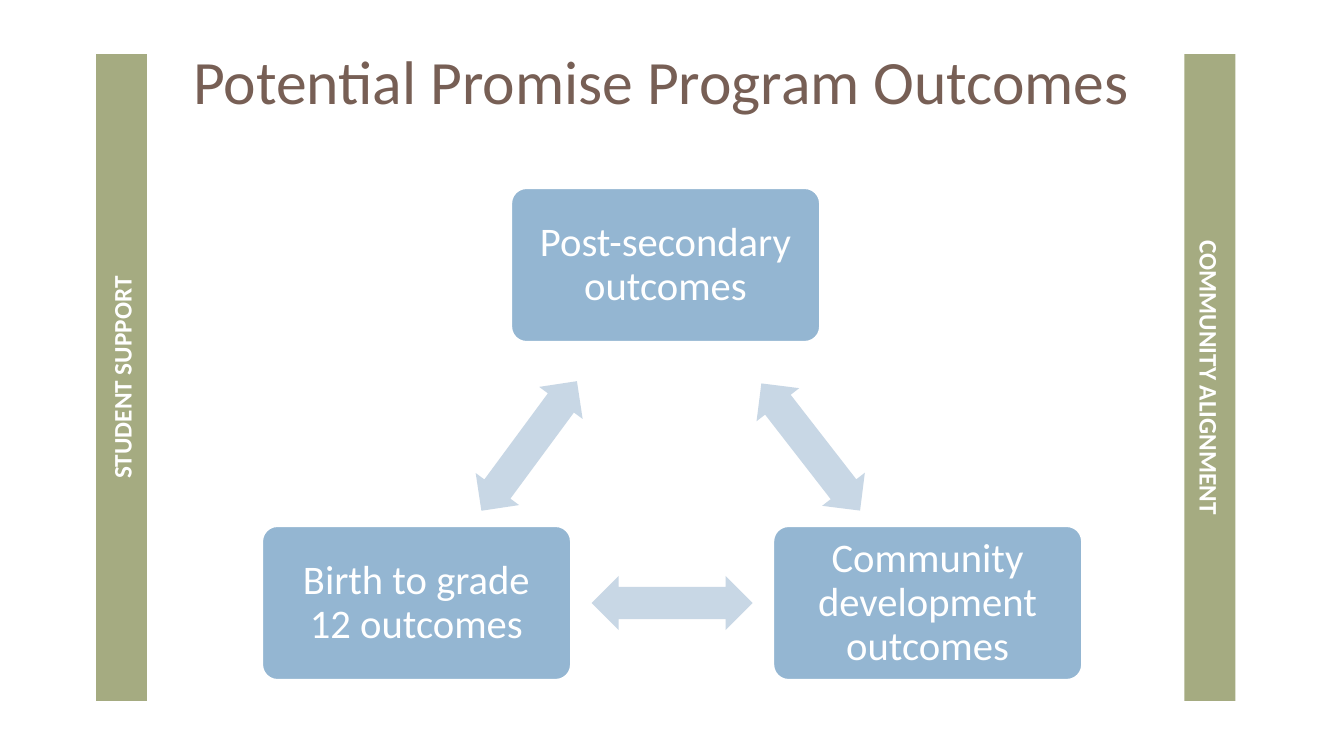
from math import atan2, degrees
from pptx import Presentation
from pptx.dml.color import RGBColor as Rgb
from pptx.enum.shapes import MSO_SHAPE as Geo
from pptx.enum.text import MSO_ANCHOR as Anchor, PP_ALIGN as Align
from pptx.util import Emu, Inches, Pt

TITLE = "Potential Promise Program Outcomes"
BOXES = [
    ("Post-secondary outcomes", 511, 188),
    ("Community development outcomes", 773, 526),
    ("Birth to grade 12 outcomes", 262, 526),
]
NUDGES = [(14, 13), (0, 0), (-12, 12)]
BARS = [
    ("STUDENT SUPPORT", 96, "vert270"),
    ("COMMUNITY ALIGNMENT", 1184, "vert"),
]
COLORS = {"box": "94B6D2", "arrow": "C8D7E5", "bar": "A5AB81",
          "title": "775F55", "white": "FFFFFF"}
FONT = "Calibri"
BOX_W, BOX_H = 309, 154
ARROW_W, ARROW_H = 161, 54
BAR_TOP, BAR_W, BAR_H = 54, 51, 647


def px(n):
    return Emu(round(n * 914400 / 100.8))


def color(name):
    return Rgb.from_string(COLORS[name])


def place(shape, *rect):
    shape.left, shape.top, shape.width, shape.height = map(px, rect)


def write(shape, text, size, tint, align, bold=False):
    frame = shape.text_frame
    frame.text = text
    frame.word_wrap = True
    frame.vertical_anchor = Anchor.MIDDLE
    para = frame.paragraphs[0]
    para.alignment = align
    font = para.runs[0].font
    font.name, font.size, font.bold = FONT, Pt(size), bold
    font.color.rgb = color(tint)
    return frame


def draw(slide, geo, fill, *rect):
    shape = slide.shapes.add_shape(geo, *map(px, rect))
    shape.shadow.inherit = False
    shape.fill.solid()
    shape.fill.fore_color.rgb = color(fill)
    shape.line.fill.background()
    return shape


def add_box(slide, text, x, y):
    box = draw(slide, Geo.ROUNDED_RECTANGLE, "box", x, y, BOX_W, BOX_H)
    box.adjustments[0] = 0.1
    box.line.color.rgb = color("white")
    box.line.width = Pt(1.5)
    frame = write(box, text, 29, "white", Align.CENTER)
    frame.margin_left = frame.margin_right = px(12)
    frame.margin_top = frame.margin_bottom = px(12)
    frame.paragraphs[0].line_spacing = 0.9


def add_arrow(slide, start, end, nudge):
    (_, x1, y1), (_, x2, y2) = start, end
    mid_x = (x1 + x2 + BOX_W) / 2 + nudge[0]
    mid_y = (y1 + y2 + BOX_H) / 2 + nudge[1]
    arrow = draw(slide, Geo.LEFT_RIGHT_ARROW, "arrow",
                 mid_x - ARROW_W / 2, mid_y - ARROW_H / 2, ARROW_W, ARROW_H)
    arrow.adjustments[0] = 0.6
    arrow.adjustments[1] = 0.5
    arrow.rotation = round(degrees(atan2(y2 - y1, x2 - x1)) % 360, 1)


def add_bar(slide, text, x, turn):
    bar = draw(slide, Geo.RECTANGLE, "bar", x, BAR_TOP, BAR_W, BAR_H)
    frame = write(bar, text, 18, "white", Align.CENTER, True)
    frame._txBody.bodyPr.set("vert", turn)


def main():
    deck = Presentation()
    deck.slide_width, deck.slide_height = Inches(13.33), Inches(7.5)
    slide = deck.slides.add_slide(deck.slide_layouts[5])
    title = slide.shapes.title
    place(title, 90, 25, 1198, 109)
    frame = write(title, TITLE, 44, "title", Align.LEFT)
    frame.margin_left = px(103)
    for i, box in enumerate(BOXES):
        add_box(slide, *box)
        add_arrow(slide, box, BOXES[(i + 1) % len(BOXES)], NUDGES[i])
    for bar in BARS:
        add_bar(slide, *bar)
    deck.save("out.pptx")


if __name__ == "__main__":
    main()
